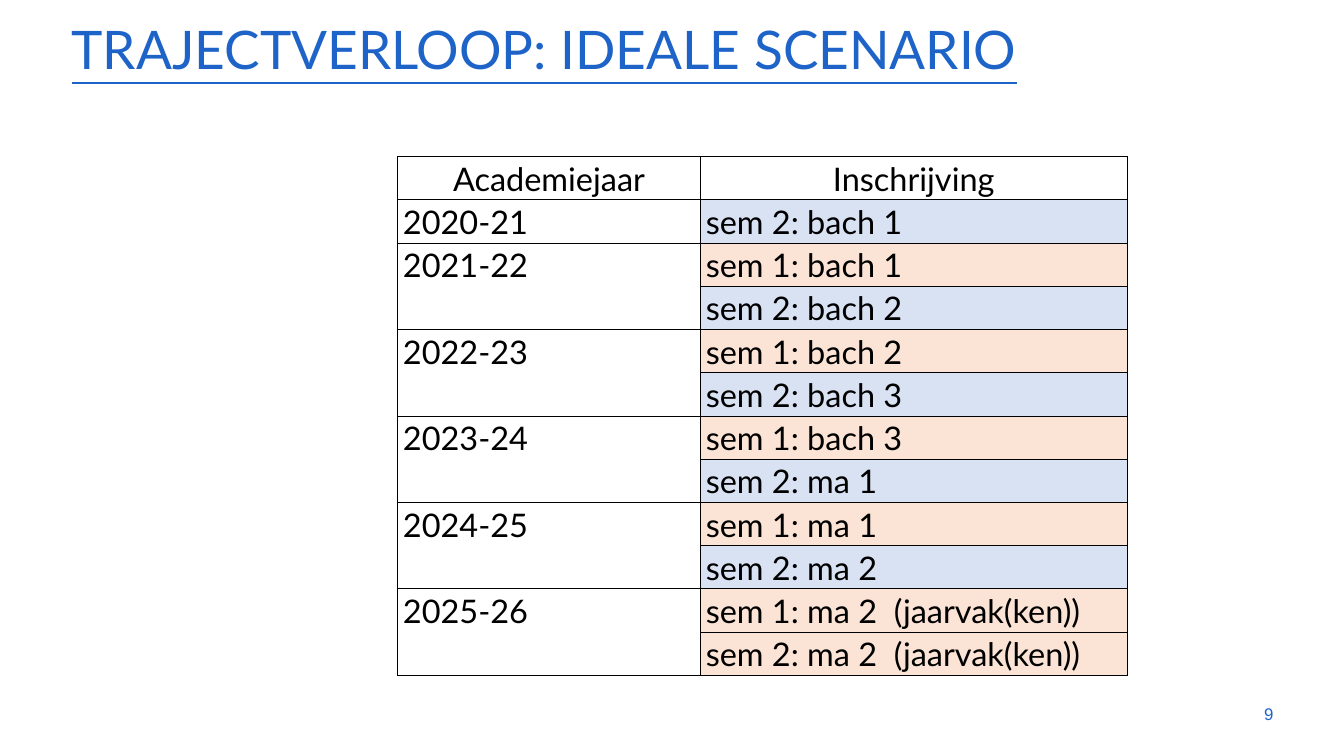
from lxml import etree
from pptx import Presentation
from pptx.dml.color import RGBColor
from pptx.enum.text import MSO_ANCHOR, PP_ALIGN
from pptx.oxml.ns import qn
from pptx.util import Cm, Pt

TOP, MIDDLE = MSO_ANCHOR.TOP, MSO_ANCHOR.MIDDLE
LEFT, CENTER, RIGHT = PP_ALIGN.LEFT, PP_ALIGN.CENTER, PP_ALIGN.RIGHT

BLUE, BLACK = "1E64C8", "000000"
SEMESTER_BLUE, SEMESTER_ORANGE = "D9E2F3", "FBE4D5"
ROW_HEIGHT = 1.55
COLUMN_WIDTHS = (10.85, 15.29)

HEADINGS = ("Academiejaar", "Inschrijving")
ENROLMENTS = {
    "2020-21": [("sem 2: bach 1", SEMESTER_BLUE)],
    "2021-22": [("sem 1: bach 1", SEMESTER_ORANGE), ("sem 2: bach 2", SEMESTER_BLUE)],
    "2022-23": [("sem 1: bach 2", SEMESTER_ORANGE), ("sem 2: bach 3", SEMESTER_BLUE)],
    "2023-24": [("sem 1: bach 3", SEMESTER_ORANGE), ("sem 2: ma 1", SEMESTER_BLUE)],
    "2024-25": [("sem 1: ma 1", SEMESTER_ORANGE), ("sem 2: ma 2", SEMESTER_BLUE)],
    "2025-26": [("sem 1: ma 2  (jaarvak(ken))", SEMESTER_ORANGE),
                ("sem 2: ma 2  (jaarvak(ken))", SEMESTER_ORANGE)],
}


def write(frame, text, size, color, font="Lato", align=LEFT, spacing=1.0):
    frame.text = text
    paragraph = frame.paragraphs[0]
    paragraph.alignment = align
    paragraph.line_spacing = spacing
    paragraph.font.name = font
    paragraph.font.size = Pt(size)
    paragraph.font.color.rgb = RGBColor.from_string(color)
    return paragraph


def add_borders(cell):
    """Draw a 1 pt black line on all four sides; borders precede the fill in tcPr."""
    properties = cell._tc.get_or_add_tcPr()
    for position, side in enumerate(("a:lnL", "a:lnR", "a:lnT", "a:lnB")):
        line = etree.Element(qn(side), w=str(Pt(1)))
        fill = etree.SubElement(line, qn("a:solidFill"))
        etree.SubElement(fill, qn("a:srgbClr"), val=BLACK)
        properties.insert(position, line)


prs = Presentation()
prs.slide_width, prs.slide_height = Cm(48.16), Cm(27.1)
slide = prs.slides.add_slide(prs.slide_layouts[5])

title = slide.shapes.title
title.left, title.top, title.width, title.height = Cm(2.31), Cm(0.71), Cm(43.64), Cm(2.39)
title.text_frame.vertical_anchor = TOP
heading = write(title.text_frame, "TRAJECTVERLOOP: IDEALE SCENARIO", 54, BLUE, spacing=0.9)
heading.font.underline = True

row_count = 1 + sum(len(semesters) for semesters in ENROLMENTS.values())
schedule = slide.shapes.add_table(
    row_count, 2, Cm(14.25), Cm(5.61), Cm(sum(COLUMN_WIDTHS)), Cm(ROW_HEIGHT * row_count)
).table
schedule.first_row = schedule.horz_banding = False
for column, width in zip(schedule.columns, COLUMN_WIDTHS):
    column.width = Cm(width)
for row in schedule.rows:
    row.height = Cm(ROW_HEIGHT)
for cell in schedule.iter_cells():
    cell.margin_left = cell.margin_right = Cm(0.19)
    cell.margin_top = cell.margin_bottom = 0
    cell.fill.background()
    add_borders(cell)

for index, text in enumerate(HEADINGS):
    write(schedule.cell(0, index).text_frame, text, 33, BLACK, align=CENTER, spacing=1.07)

first = 1
for year, semesters in ENROLMENTS.items():
    last = first + len(semesters) - 1
    year_cell = schedule.cell(first, 0)
    if last > first:
        year_cell.merge(schedule.cell(last, 0))
    write(year_cell.text_frame, year, 33, BLACK, spacing=1.07)
    for index, (enrolment, color) in enumerate(semesters, first):
        cell = schedule.cell(index, 1)
        cell.fill.solid()
        cell.fill.fore_color.rgb = RGBColor.from_string(color)
        write(cell.text_frame, enrolment, 33, BLACK, spacing=1.07)
    first = last + 1

page_number = slide.shapes.add_textbox(Cm(43.31), Cm(24.87), Cm(2.57), Cm(1.45)).text_frame
page_number.word_wrap = True
page_number.vertical_anchor = MIDDLE
write(page_number, "9", 17.1, BLUE, font="Arial", align=RIGHT)

prs.save("out.pptx")
